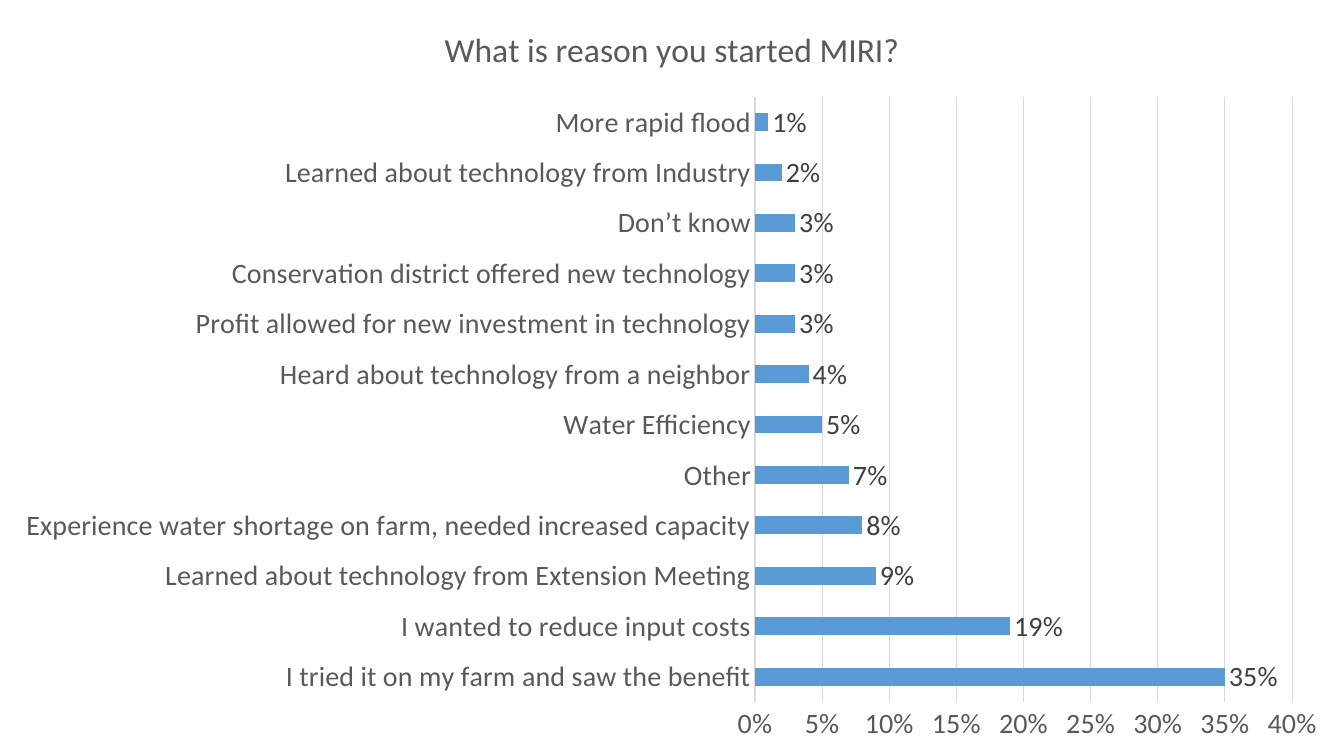
from lxml.etree import SubElement
from pptx import Presentation
from pptx.chart.data import CategoryChartData
from pptx.dml.color import RGBColor
from pptx.enum.chart import XL_CHART_TYPE as ChartType
from pptx.enum.chart import XL_LABEL_POSITION as LabelPosition
from pptx.enum.chart import XL_TICK_MARK as TickMark
from pptx.oxml.ns import qn
from pptx.util import Pt

# Content
QUESTION = "What is reason you started MIRI?"
REASONS = [  # bottom bar first
    ("I tried it on my farm and saw the benefit", 0.35),
    ("I wanted to reduce input costs", 0.19),
    ("Learned about technology from Extension Meeting", 0.09),
    ("Experience water shortage on farm, needed increased capacity", 0.08),
    ("Other", 0.07),
    ("Water Efficiency", 0.05),
    ("Heard about technology from a neighbor", 0.04),
    ("Profit allowed for new investment in technology", 0.03),
    ("Conservation district offered new technology", 0.03),
    ("Don’t know", 0.03),
    ("Learned about technology from Industry", 0.02),
    ("More rapid flood", 0.01),
]

# Style and geometry, in px
FONT, PERCENT = "Calibri", "0%"
GRAY, DARK, LIGHT, BLUE = "595959", "404040", "D9D9D9", "5B9BD5"
SLIDE_W, SLIDE_H = 1344, 756
PLOT = {"x": 755, "y": 97, "w": 537, "h": 605}


def px(length):
    return round(length * 914400 / 100.8)


def color(code):
    return RGBColor.from_string(code)


def style_font(font, size, code):
    font.name, font.size, font.bold = FONT, Pt(size), False
    font.color.rgb = color(code)


def style_line(line):
    line.color.rgb = color(LIGHT)
    line.width = Pt(0.75)


def place_plot(chart):
    """Fix the inner plot area as fractions of the chart."""
    plot_area = chart._chartSpace.chart.plotArea
    for old in plot_area.findall(qn("c:layout")):
        plot_area.remove(old)
    layout = SubElement(plot_area, qn("c:layout"))
    plot_area.insert(0, layout)
    manual = SubElement(layout, qn("c:manualLayout"))
    settings = [("layoutTarget", "inner"), ("xMode", "edge"), ("yMode", "edge")]
    for key, length in PLOT.items():
        whole = SLIDE_W if key in "xw" else SLIDE_H
        settings.append((key, f"{length / whole:.4f}"))
    for tag, value in settings:
        SubElement(manual, qn(f"c:{tag}")).set("val", value)


# Slide
deck = Presentation()
deck.slide_width, deck.slide_height = px(SLIDE_W), px(SLIDE_H)
slide = deck.slides.add_slide(deck.slide_layouts[6])

# Chart
survey = CategoryChartData(number_format=PERCENT)
survey.categories = [reason for reason, _ in REASONS]
survey.add_series("Series 1", [share for _, share in REASONS])
chart = slide.shapes.add_chart(
    ChartType.BAR_CLUSTERED, 0, 0, px(SLIDE_W), px(SLIDE_H), survey).chart
style_font(chart.font, 20, "000000")
chart.has_legend = False
place_plot(chart)

# Title
chart.has_title = True
chart.chart_title.include_in_layout = False
question = chart.chart_title.text_frame.paragraphs[0].add_run()
question.text = QUESTION
style_font(question.font, 24, GRAY)

# Axes
reason_axis, share_axis = chart.category_axis, chart.value_axis
for axis in (reason_axis, share_axis):
    axis.major_tick_mark = axis.minor_tick_mark = TickMark.NONE
    style_font(axis.tick_labels.font, 20, GRAY)
style_line(reason_axis.format.line)
share_axis.format.line.fill.background()
share_axis.has_major_gridlines = True
style_line(share_axis.major_gridlines.format.line)
share_axis.minimum_scale, share_axis.maximum_scale = 0, 0.4
share_axis.major_unit = 0.05
share_axis.tick_labels.number_format = PERCENT
share_axis.tick_labels.number_format_is_linked = False

# Bars and their labels
bars = chart.plots[0]
bars.gap_width = 182
bars.vary_by_categories = False
shares = bars.series[0]
shares.format.fill.solid()
shares.format.fill.fore_color.rgb = color(BLUE)
labels = shares.data_labels
labels.show_value = True
labels.position = LabelPosition.OUTSIDE_END
labels.number_format = PERCENT
labels.number_format_is_linked = False
style_font(labels.font, 20, DARK)

deck.save("out.pptx")
